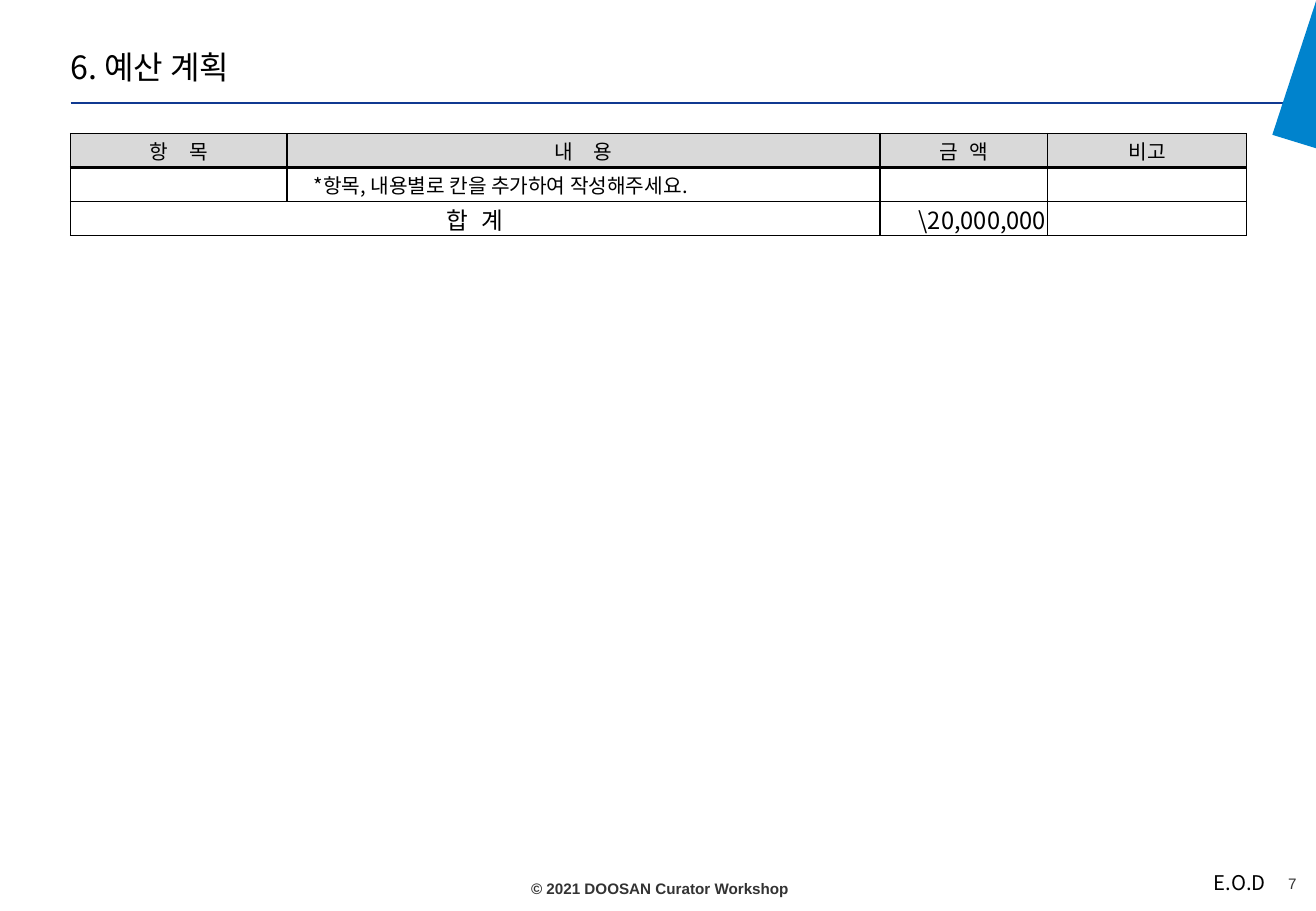
"""Build the budget plan slide with its summary table."""
from lxml.etree import SubElement as Sub
from pptx import Presentation
from pptx.dml.color import RGBColor as RGB
from pptx.enum.shapes import MSO_CONNECTOR as Link
from pptx.enum.text import MSO_ANCHOR as Anchor, PP_ALIGN as Align
from pptx.oxml.ns import qn
from pptx.util import Inches, Pt

theme = {
    "ink": RGB(0, 0, 0), "gray": RGB(0x33, 0x33, 0x33),
    "head": RGB(0xD9, 0xD9, 0xD9), "rule": RGB(0x10, 0x39, 0x91),
    "blue": RGB(0x00, 0x83, 0xCD),
    "sans": "Arial", "hangul": "Noto Sans CJK KR",
    "title": Pt(19), "sum": Pt(14), "body": Pt(12), "foot": Pt(9),
    "thin": Pt(1), "thick": Pt(2.25), "line": Pt(1.5),
}
body = {"name": theme["hangul"], "size": theme["body"], "color": theme["ink"]}
total = body | {"size": theme["sum"]}
head = body | {"size": theme["title"], "bold": False}
foot = {"name": theme["sans"], "size": theme["foot"], "color": theme["gray"]}

deck = Presentation()
deck.slide_width, deck.slide_height = Inches(10.83), Inches(7.5)
slide = deck.slides.add_slide(deck.slide_layouts[5])
shapes = slide.shapes


def part(x, y):
    """Turn percent shares of the slide into lengths."""
    return int(deck.slide_width * x / 100), int(deck.slide_height * y / 100)


def write(para, text, form, align, gap=0):
    """Write text in one format, with extra space (points) around its gap."""
    para.alignment = align
    for bit in (text[:2], text[2:]) if gap else (text,):
        run = para.add_run()
        run.text = bit
        for key, val in form.items():
            if key == "color":
                run.font.color.rgb = val
            else:
                setattr(run.font, key, val)
        props = run.font._element
        Sub(props, qn("a:ea")).set("typeface", form["name"])
        if gap and bit == text[:2]:
            props.set("spc", str(int(gap * 50)))


left = 5.36
rule = shapes.add_connector(Link.STRAIGHT, *part(left, 11.33), *part(98.06, 11.33))
rule.line.color.rgb, rule.line.width = theme["rule"], theme["line"]
Sub(rule._element.spPr, qn("a:effectLst"))

for top, tip, base in ((0.13, (96.68, 14.8), 16.27), (0.93, (96.95, 14.67), 16)):
    pen = shapes.build_freeform(*part(100, top), scale=1.0)
    pen.add_line_segments([part(*tip), part(100, base)])
    wedge = pen.convert_to_shape()
    wedge.shadow.inherit = False
    wedge.fill.solid()
    wedge.fill.fore_color.rgb = theme["blue"]
    wedge.line.fill.background()

title = shapes.title
title.left, title.top = part(left, 5.2)
title.width, title.height = part(88.83, 4.27)
flat = dict.fromkeys(("margin_left", "margin_right", "margin_top", "margin_bottom"), 0)
for key, val in (flat | {"vertical_anchor": Anchor.MIDDLE}).items():
    setattr(title.text_frame, key, val)
write(title.text_frame.paragraphs[0], "6. 예산 계획", head, Align.LEFT)

inset = {"margin_left": Inches(0.1), "margin_top": Inches(0.05), "word_wrap": False}
wrap = {"word_wrap": True}
notes = (
    ("© 2021 DOOSAN Curator Workshop", (36.38, 96.53), (27.52, 2),
     foot | {"bold": True}, Align.CENTER, wrap),
    ("7", (80.33, 96), (18.19, 2.93), foot, Align.RIGHT, wrap),
    ("E.O.D", (91.32, 94.93), (5.82, 4), body, Align.LEFT, inset),
)
for text, spot, size, form, align, frame in notes:
    box = shapes.add_textbox(*part(*spot), *part(*size)).text_frame
    for key, val in (flat | frame).items():
        setattr(box, key, val)
    write(box.paragraphs[0], text, form, align)

cols, row = (16.44, 45.06, 12.74, 15.14), 3.73
grid = shapes.add_table(3, 4, *part(left, 14.67), *part(sum(cols), 3 * row)).table
grid.first_row = grid.horz_banding = False
for col, wide in zip(grid.columns, cols):
    col.width = part(wide, 0)[0]
for line in grid.rows:
    line.height = part(0, row)[1]
grid.cell(2, 0).merge(grid.cell(2, 1))

words = {
    (0, 0): ("항 목", body, Align.CENTER, 9.8),
    (0, 1): ("내 용", body, Align.CENTER, 9.8),
    (0, 2): ("금 액", body, Align.CENTER, 4),
    (0, 3): ("비고", body, Align.CENTER),
    (1, 1): ("*항목, 내용별로 칸을 추가하여 작성해주세요.", body, Align.JUSTIFY),
    (2, 0): ("합 계", total, Align.CENTER, 4.8),
    (2, 2): ("\\20,000,000", total, Align.RIGHT),
}
pad = flat | {"margin_left": Inches(0.01), "margin_right": Inches(0.01),
              "vertical_anchor": Anchor.MIDDLE}
for r in range(3):
    for c in range(4):
        cell = grid.cell(r, c)
        for key, val in pad.items():
            setattr(cell, key, val)
        para = cell.text_frame.paragraphs[0]
        if (r, c) in words:
            write(para, *words[r, c])
        else:
            Sub(para._p, qn("a:endParaRPr")).set("sz", str(int(theme["body"].pt * 100)))
        props = cell._tc.get_or_add_tcPr()
        for side in "LRTB":
            bold = (r, side) in ((0, "B"), (1, "T"))
            edge = Sub(props, qn("a:ln" + side))
            edge.set("w", str(int(theme["thick" if bold else "thin"])))
            ink = Sub(Sub(edge, qn("a:solidFill")), qn("a:srgbClr"))
            ink.set("val", str(theme["ink"]))
        if r == 0:
            cell.fill.solid()
            cell.fill.fore_color.rgb = theme["head"]
        else:
            cell.fill.background()
hint = grid.cell(1, 1).text_frame.paragraphs[0]
hint._p.get_or_add_pPr().set("marL", str(int(Inches(0.21))))

deck.save("out.pptx")
